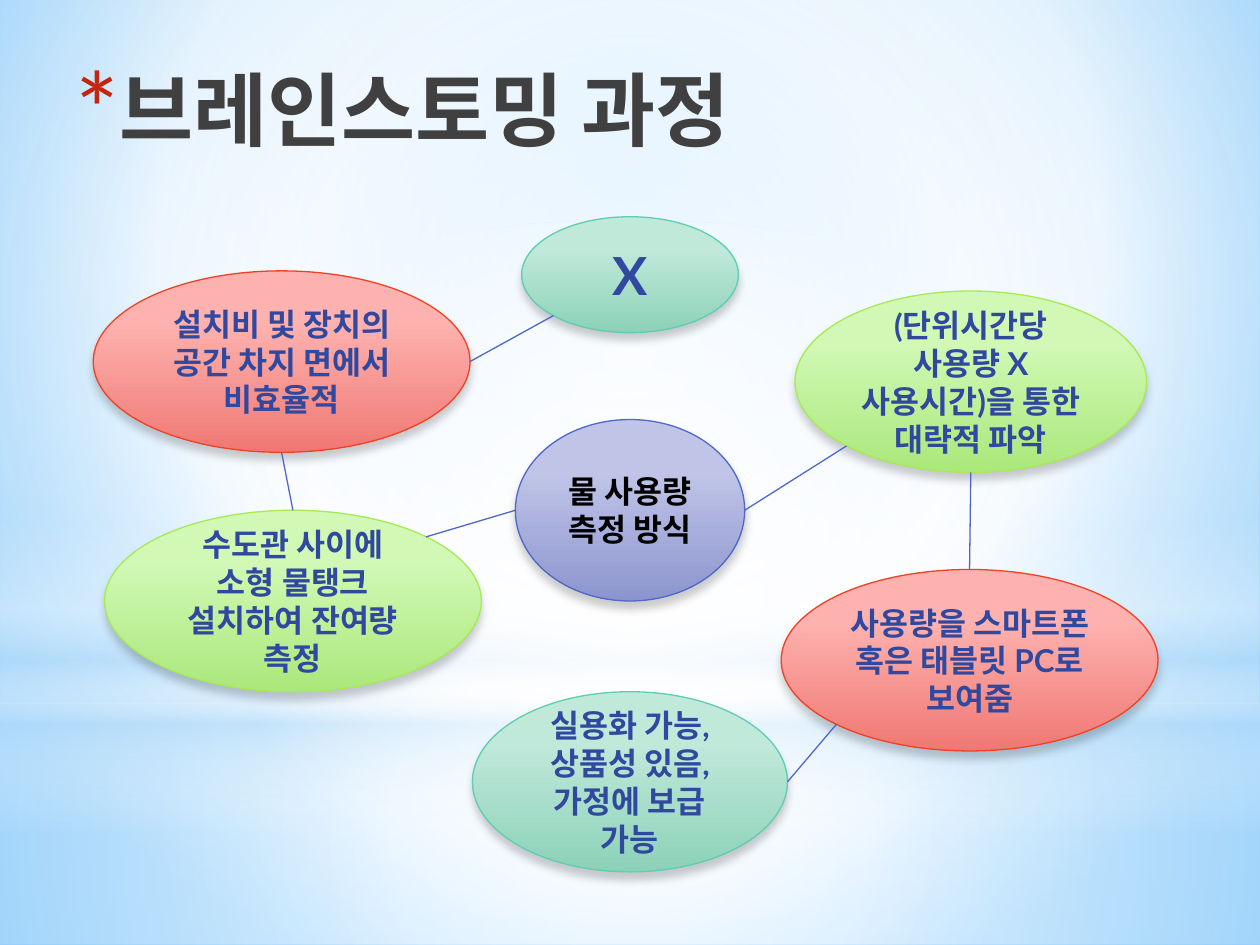
from math import cos, radians, sin

from lxml import etree
from pptx import Presentation
from pptx.dml.color import RGBColor
from pptx.enum.shapes import MSO_CONNECTOR, MSO_SHAPE
from pptx.enum.text import MSO_ANCHOR, PP_ALIGN
from pptx.oxml.ns import qn
from pptx.util import Inches, Pt

OVAL, RECT = MSO_SHAPE.OVAL, MSO_SHAPE.RECTANGLE
STRAIGHT = MSO_CONNECTOR.STRAIGHT
MIDDLE, TOP = MSO_ANCHOR.MIDDLE, MSO_ANCHOR.TOP
CENTER, LEFT = PP_ALIGN.CENTER, PP_ALIGN.LEFT
FONT = "Lato"
COLORS = {
    "white": "FFFFFF", "black": "000000", "title": "404040", "marker": "C3260C",
    "ink": "31489F", "link": "4E67C8", "haze": "B4DCFA",
    "sky": "9ED5FF", "deep sky": "5BB9FF",
}
# Each bubble style: gradient top, gradient bottom, outline
STYLES = {
    "topic": ("C0C5E8", "8C94CE", "4E67C8"),
    "idea": ("D1F8B5", "AAE87B", "A7EA52"),
    "review": ("FDB2AF", "F07873", "F14124"),
    "verdict": ("C0E9DA", "8CD1B8", "5DCEAF"),
}
BUBBLES = {
    "topic": ("topic", (4.09, 3.33, 1.82, 1.44), "물 사용량 측정 방식"),
    "estimate": ("idea", (6.31, 2.31, 2.79, 1.44),
                 "(단위시간당 사용량 X 사용시간)을 통한 대략적 파악"),
    "tank": ("idea", (0.83, 4.05, 2.99, 1.44),
             "수도관 사이에 소형 물탱크 설치하여 잔여량 측정"),
    "cost": ("review", (0.74, 2.15, 2.99, 1.44),
             "설치비 및 장치의 공간 차지 면에서 비효율적"),
    "devices": ("review", (6.2, 4.52, 2.99, 1.44),
                "사용량을 스마트폰 혹은 태블릿 PC로 보여줌"),
    "practical": ("verdict", (3.75, 5.49, 2.5, 1.43),
                  "실용화 가능, 상품성 있음, 가정에 보급 가능"),
    "rejected": ("verdict", (4.14, 1.72, 1.72, 0.92), "X"),
}
# Angles on the bubble edge, clockwise from the right
EAST, SOUTH_EAST, SOUTH, SOUTH_WEST, WEST, NORTH, NORTH_EAST = (
    0, 45, 90, 135, 180, 270, 315)
LINKS = [
    ("tank", NORTH_EAST, "topic", WEST),
    ("estimate", SOUTH_WEST, "topic", EAST),
    ("tank", NORTH, "cost", SOUTH),
    ("estimate", SOUTH, "devices", NORTH),
    ("practical", EAST, "devices", SOUTH_WEST),
    ("cost", EAST, "rejected", SOUTH_WEST),
]


def rgb(value):
    return RGBColor.from_string(value)


def set_gradient(owner, fill, stops, angle=None, focus=(50, 50, 50, 50)):
    """Fill with (position, hex, opacity) stops: linear if angled, else radial."""
    fill.gradient()
    grad = next(owner.element.iter(qn("a:gradFill")))
    for child in list(grad):
        grad.remove(child)
    stop_list = etree.SubElement(grad, qn("a:gsLst"))
    for position, color, opacity in stops:
        stop = etree.SubElement(stop_list, qn("a:gs"), pos=str(position * 1000))
        tint = etree.SubElement(stop, qn("a:srgbClr"), val=color)
        if opacity < 100:
            etree.SubElement(tint, qn("a:alpha"), val=str(opacity * 1000))
    if angle is not None:
        etree.SubElement(grad, qn("a:lin"), ang=str(angle * 60000), scaled="0")
    else:
        radial = etree.SubElement(grad, qn("a:path"))
        radial.set("path", "circle")
        edges = {side: str(part * 1000) for side, part in zip("ltrb", focus)}
        etree.SubElement(radial, qn("a:fillToRect"), **edges)


def write_text(shape, text, size=18, color="ink", align=CENTER, anchor=MIDDLE):
    frame = shape.text_frame
    frame.word_wrap = True
    frame.vertical_anchor = anchor
    para = frame.paragraphs[0]
    para.alignment = align
    span = para.add_run()
    span.text = text
    span.font.name, span.font.size, span.font.bold = FONT, Pt(size), True
    span.font.color.rgb = rgb(COLORS[color])
    return para


def add_panel(page, kind, box, stops, **gradient):
    shape = page.shapes.add_shape(kind, *map(Inches, box))
    shape.shadow.inherit = False
    shape.line.fill.background()
    set_gradient(shape, shape.fill, stops, **gradient)
    return shape


def add_backdrop(page, width, height):
    white, haze = COLORS["white"], COLORS["haze"]
    set_gradient(page, page.background.fill,
                 [(0, COLORS["sky"], 100), (60, white, 100),
                  (100, COLORS["deep sky"], 100)], focus=(20, 10, 20, 60))
    horizon = 5.58
    add_panel(page, RECT, (0, horizon, width, height - horizon),
              [(0, white, 91), (37, white, 76), (100, haze, 79)])
    add_panel(page, RECT, (0, 0, width, horizon),
              [(0, white, 89), (48, white, 62), (100, haze, 79)])
    add_panel(page, RECT, (0, 4.12, width, 2.5),
              [(0, white, 0), (29, white, 30), (45, haze, 40),
               (55, white, 26), (65, haze, 60), (100, white, 0)], angle=90)
    add_panel(page, OVAL, (0, 1.75, width, horizon),
              [(0, white, 100), (56, white, 0)])


def add_title(page, box, text):
    """Place the heading with its large asterisk marker."""
    shape = page.shapes.add_textbox(*map(Inches, box))
    para = write_text(shape, text, size=46, color="title", align=LEFT, anchor=TOP)
    props = para._p.get_or_add_pPr()
    props.set("marL", str(Inches(0.35)))
    props.set("indent", str(-Inches(0.35)))
    marker = etree.SubElement(props, qn("a:buClr"))
    etree.SubElement(marker, qn("a:srgbClr"), val=COLORS["marker"])
    etree.SubElement(props, qn("a:buSzPct"), val="128000")
    etree.SubElement(props, qn("a:buFont"), typeface=FONT)
    etree.SubElement(props, qn("a:buChar"), char="*")


def add_bubble(page, style, box, text):
    top, bottom, outline = STYLES[style]
    shape = add_panel(page, OVAL, box, [(28, top, 100), (100, bottom, 100)], angle=90)
    shape.line.color.rgb = rgb(outline)
    shape.line.width = Pt(0.75)
    effects = shape.element.spPr.find(qn("a:effectLst"))
    shadow = etree.SubElement(effects, qn("a:outerShdw"), blurRad=str(Pt(5)),
                              dist=str(Pt(4)), dir=str(90 * 60000), rotWithShape="0")
    tint = etree.SubElement(shadow, qn("a:srgbClr"), val=COLORS["black"])
    etree.SubElement(tint, qn("a:alpha"), val="20000")
    write_text(shape, text, size=30 if text == "X" else 18,
               color="black" if style == "topic" else "ink")


def edge_point(name, angle):
    left, top, width, height = BUBBLES[name][1]
    turn = radians(angle)
    return (Inches(left + width / 2 * (1 + cos(turn))),
            Inches(top + height / 2 * (1 + sin(turn))))


def add_link(page, start, start_angle, end, end_angle):
    link = page.shapes.add_connector(
        STRAIGHT, *edge_point(start, start_angle), *edge_point(end, end_angle))
    link.line.color.rgb = rgb(COLORS["link"])
    link.line.width = Pt(0.75)
    etree.SubElement(link.element.spPr, qn("a:effectLst"))


def main():
    width, height = 10, 7.5
    deck = Presentation()
    deck.slide_width, deck.slide_height = Inches(width), Inches(height)
    page = deck.slides.add_slide(deck.slide_layouts[6])
    add_backdrop(page, width, height)
    add_title(page, (0.5, 0.43, 7.12, 1.25), "브레인스토밍 과정")
    for bubble in BUBBLES.values():
        add_bubble(page, *bubble)
    for link in LINKS:
        add_link(page, *link)
    deck.save("out.pptx")


if __name__ == "__main__":
    main()
